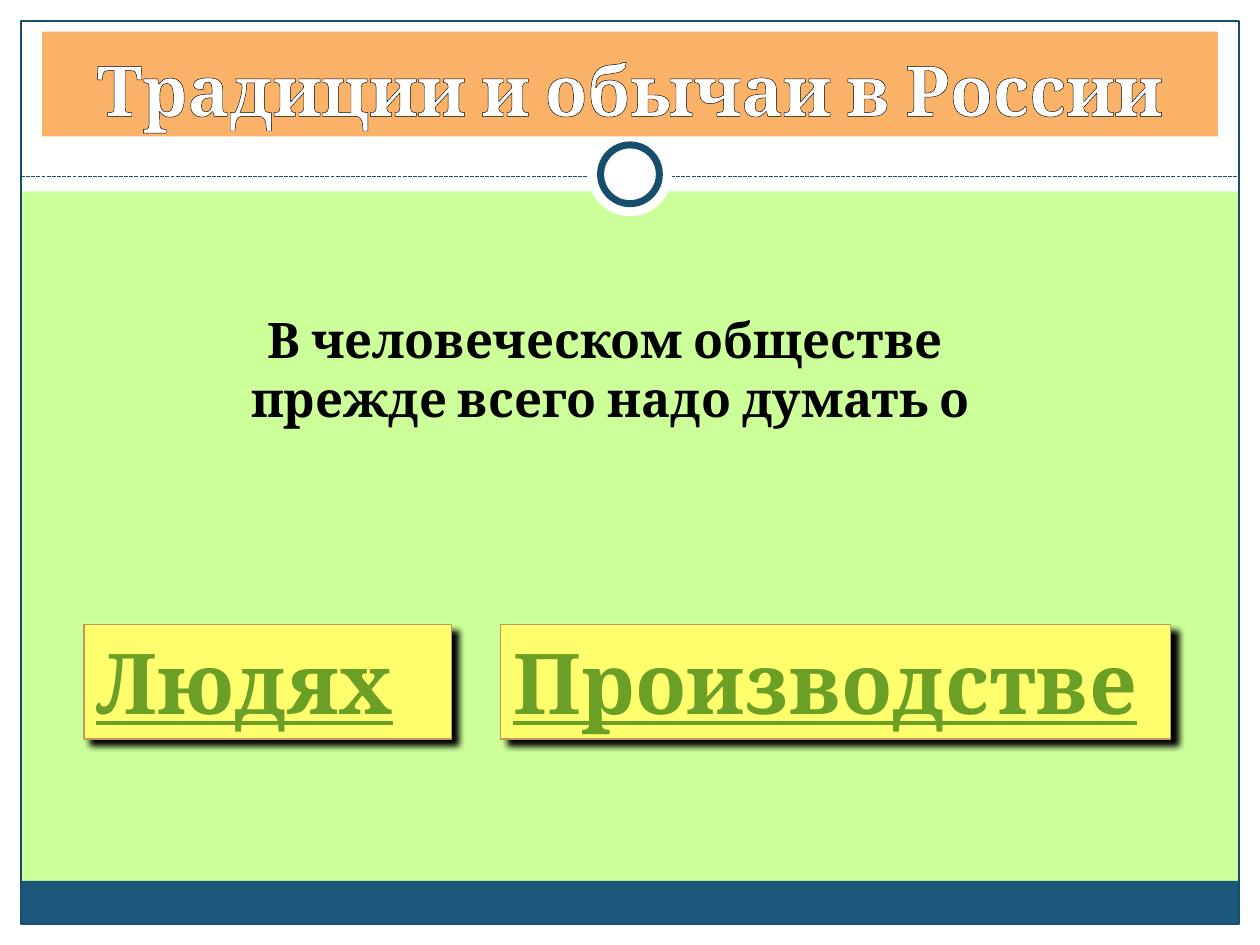
"""Build a quiz slide about Russian traditions with two answer buttons."""
import lxml.etree
import pptx
import pptx.dml.color
import pptx.enum.dml
import pptx.enum.shapes
import pptx.enum.text
import pptx.oxml.ns
import pptx.util

RGBColor = pptx.dml.color.RGBColor
WHITE = RGBColor(0xFF, 0xFF, 0xFF)
BLACK = RGBColor(0x00, 0x00, 0x00)
LIME = RGBColor(0xCC, 0xFF, 0x99)
BLUE = RGBColor(0x1B, 0x58, 0x7C)
DARK_BLUE = RGBColor(0x18, 0x4E, 0x6D)
ORANGE = RGBColor(0xF9, 0xB2, 0x68)
YELLOW = RGBColor(0xFF, 0xFF, 0x6D)
TAN = RGBColor(0xC1, 0x98, 0x59)
GREEN = RGBColor(0x6B, 0x9F, 0x25)

COLUMNS, ROWS = 60, 45
CELL = pptx.util.Inches(10) / COLUMNS
RECTANGLE = pptx.enum.shapes.MSO_SHAPE.RECTANGLE
OVAL = pptx.enum.shapes.MSO_SHAPE.OVAL
CENTER = pptx.enum.text.PP_ALIGN.CENTER
LEFT = pptx.enum.text.PP_ALIGN.LEFT
qn = pptx.oxml.ns.qn

presentation = pptx.Presentation()
presentation.slide_width = round(COLUMNS * CELL)
presentation.slide_height = round(ROWS * CELL)
slide = presentation.slides.add_slide(presentation.slide_layouts[6])
slide.background.fill.solid()
slide.background.fill.fore_color.rgb = LIME


def add_block(kind, grid_box, fill=None, line=None, line_width=0.75):
    shape = slide.shapes.add_shape(kind, *[round(cells * CELL) for cells in grid_box])
    shape.shadow.inherit = False
    if fill is None:
        shape.fill.background()
    else:
        shape.fill.solid()
        shape.fill.fore_color.rgb = fill
    if line is None:
        shape.line.fill.background()
    else:
        shape.line.color.rgb = line
        shape.line.width = pptx.util.Pt(line_width)
    return shape


def add_text(shape, lines, size, color, alignment, wrap, anchor):
    frame = shape.text_frame
    frame.word_wrap = wrap
    frame.vertical_anchor = anchor
    for index, text in enumerate(lines):
        paragraph = frame.add_paragraph() if index else frame.paragraphs[0]
        paragraph.alignment = alignment
        run = paragraph.add_run()
        run.text = text
        run.font.name = "Cambria"
        run.font.size = pptx.util.Pt(size)
        run.font.bold = True
        run.font.color.rgb = color
    return run


TOP = pptx.enum.text.MSO_ANCHOR.TOP
BOTTOM = pptx.enum.text.MSO_ANCHOR.BOTTOM

for border in [
    (0, ROWS - 1, COLUMNS, 1),
    (0, 0, COLUMNS, 9.12),
    (0, 0, 1, ROWS),
    (COLUMNS - 1, 0, 1, ROWS),
]:
    add_block(RECTANGLE, border, WHITE)
add_block(RECTANGLE, (1, 41.95, COLUMNS - 2, 2.05), BLUE)
add_block(RECTANGLE, (1, 1, COLUMNS - 2, ROWS - 2), line=DARK_BLUE)

divider = slide.shapes.add_connector(
    pptx.enum.shapes.MSO_CONNECTOR.STRAIGHT,
    *[round(cells * CELL) for cells in (1, 8.4, COLUMNS - 1, 8.4)],
)
divider.line.color.rgb = DARK_BLUE
divider.line.width = pptx.util.Pt(0.75)
divider.line.dash_style = pptx.enum.dml.MSO_LINE.SQUARE_DOT
lxml.etree.SubElement(divider._element.spPr, qn("a:effectLst"))

add_block(OVAL, (28, 6.3, 4, 4), WHITE)
add_block(OVAL, (28.6, 6.9, 2.8, 2.8), WHITE, DARK_BLUE, 4)

title = add_block(RECTANGLE, (2, 1.5, COLUMNS - 4, 5), ORANGE)
title_run = add_text(title, ["Традиции и обычаи в России"], 40, WHITE, CENTER, True, BOTTOM)
outline = lxml.etree.Element(qn("a:ln"), w=str(pptx.util.Pt(0.75)))
outline_fill = lxml.etree.SubElement(outline, qn("a:solidFill"))
lxml.etree.SubElement(outline_fill, qn("a:srgbClr"), val=str(BLACK))
title_run.font._element.insert(0, outline)

question = slide.shapes.add_textbox(
    *[round(cells * CELL) for cells in (11.05, 14.45, 36.05, 6.25)]
)
question_lines = ["В человеческом обществе ", "прежде всего надо думать о"]
add_text(question, question_lines, 28, BLACK, CENTER, False, TOP)

for answer, left, width, wrap in [
    ("Людях", 4, 17.5, True),
    ("Производстве", 23.85, 31.9, False),
]:
    button = add_block(RECTANGLE, (left, 29.75, width, 5.45), YELLOW, TAN)
    answer_run = add_text(button, [answer], 48, GREEN, LEFT, wrap, TOP)
    answer_run.font.underline = True
    shadow = lxml.etree.SubElement(
        button._element.spPr.find(qn("a:effectLst")),
        qn("a:outerShdw"),
        blurRad=str(pptx.util.Pt(4)),
        dist=str(pptx.util.Pt(5)),
        dir=str(45 * 60000),
        algn="tl",
        rotWithShape="0",
    )
    lxml.etree.SubElement(shadow, qn("a:srgbClr"), val=str(BLACK))

presentation.save("out.pptx")
